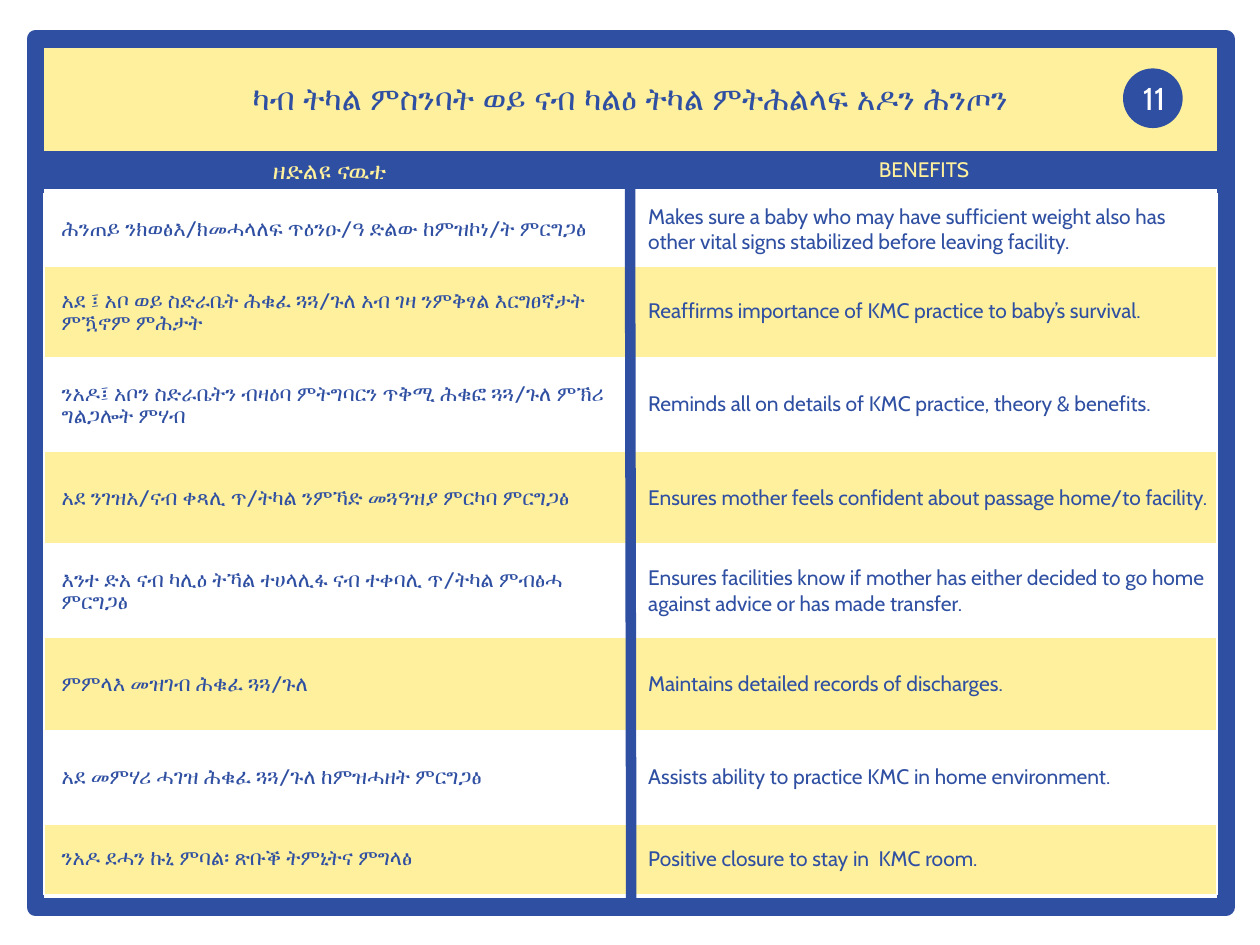
from lxml import etree
from pptx import Presentation
from pptx import util as u
from pptx.dml.color import RGBColor
from pptx.enum import shapes, text
from pptx.oxml import ns

INK = {"blue": "2F4FA2", "cream": "FEF09C", "white": "FFFFFF"}
FONT = "Cabin"
ROWS = [
    ("ሕንጠይ ንክወፅእ/ክመሓላለፍ ጥዕንዑ/ዓ ድልው ከምዝኮነ/ት ምርግጋፅ",
     "Makes sure a baby who may have sufficient weight also has other vital signs stabilized before leaving facility."),
    ("አደ ፤ አቦ ወይ ስድራቤት ሕቁፈ ጓጓ/ጉለ አብ ገዛ ንምቅፃል እርግፀኛታት ምዃኖም ምሕታት",
     "Reaffirms importance of KMC practice to baby’s survival."),
    ("ንአዶ፤ አቦን ስድራቤትን ብዛዕባ ምትግባርን ጥቅሚ ሕቁፎ ጓጓ/ጉለ ምኽሪ ግልጋሎት ምሃብ",
     "Reminds all on details of KMC practice, theory & benefits."),
    ("አደ ንገዝአ/ናብ ቀጻሊ ጥ/ትካል ንምኻድ መጓዓዝያ ምርካባ ምርግጋፅ",
     "Ensures mother feels confident about passage home/to facility."),
    ("እንተ ድአ ናብ ካሊዕ ትኻል ተሀላሊፋ ናብ ተቀባሊ ጥ/ትካል ምብፅሓ ምርግጋፅ",
     "Ensures facilities know if mother has either decided to go home against advice or has made transfer."),
    ("ምምላእ መዝገብ ሕቁፈ ጓጓ/ጉለ",
     "Maintains detailed records of discharges."),
    ("አደ መምሃሪ ሓገዝ ሕቁፈ ጓጓ/ጉለ ከምዝሓዘት ምርግጋፅ",
     "Assists ability to practice KMC in home environment."),
    ("ንአዶ ደሓን ኩኒ ምባል፡ ጽቡቕ ትምኒትና ምግላፅ",
     "Positive closure to stay in  KMC room."),
]


def paint(name):
    return RGBColor.from_string(INK[name])


def write(frame, words, size=12, color="blue", bold=False, align=None):
    para = frame.paragraphs[0]
    para.alignment = align
    run = para.add_run()
    run.text = words
    run.font.name = FONT
    run.font.size = u.Pt(size)
    run.font.bold = bold
    run.font.color.rgb = paint(color)


def label(slide, box, words, wrap=True, anchor=text.MSO_ANCHOR.TOP, **style):
    frame = slide.shapes.add_textbox(*map(u.Inches, box)).text_frame
    frame.word_wrap = wrap
    frame.vertical_anchor = anchor
    write(frame, words, align=text.PP_ALIGN.CENTER, **style)


def block(slide, box, fill=None, line=None, width=1, kind=shapes.MSO_SHAPE.RECTANGLE):
    shape = slide.shapes.add_shape(kind, *map(u.Inches, box))
    shape.shadow.inherit = False
    if fill:
        shape.fill.solid()
        shape.fill.fore_color.rgb = paint(fill)
    else:
        shape.fill.background()
    if line:
        shape.line.color.rgb = paint(line)
        shape.line.width = u.Pt(width)
    else:
        shape.line.fill.background()


def rule(slide, *ends):
    line = slide.shapes.add_connector(shapes.MSO_CONNECTOR.STRAIGHT, *map(u.Inches, ends))
    line.line.color.rgb = paint("blue")
    line.line.width = u.Pt(6)
    etree.SubElement(line._element.spPr, ns.qn("a:effectLst"))


def edge(cell, low):
    props = cell._tc.get_or_add_tcPr()
    for spot, (side, width) in enumerate((("L", 1), ("R", 1), ("T", 1), ("B", low))):
        line = etree.Element(ns.qn("a:ln" + side), w=str(u.Pt(width)))
        fill = etree.SubElement(line, ns.qn("a:solidFill"))
        etree.SubElement(fill, ns.qn("a:srgbClr"), val=INK["white"])
        props.insert(spot, line)


def frame(slide, box):
    x, y, w, h = box
    block(slide, (x, y, w, 1.18), fill="cream")
    block(slide, box, line="blue", width=10)


def heads(slide, box):
    x, y, w, h = box
    block(slide, box, fill="blue")
    label(slide, (x, y - 0.01, 4.67, 0.34), "ዘድልዩ ናዉቲ", size=14, color="cream")
    label(slide, (x + 4.72, y - 0.01, 4.67, h), "BENEFITS", color="cream")


def steps(slide, box):
    x, y, w, h = box
    grid = slide.shapes.add_table(len(ROWS), 2, *map(u.Inches, box)).table
    grid.first_row = grid.horz_banding = False
    for col in grid.columns:
        col.width = u.Inches(w / 2)
    for r, row in enumerate(ROWS):
        grid.rows[r].height = u.Inches(0.56 if r in (0, len(ROWS) - 1) else 0.74)
        for c, words in enumerate(row):
            cell = grid.cell(r, c)
            cell.fill.solid()
            cell.fill.fore_color.rgb = paint("cream" if r % 2 else "white")
            cell.vertical_anchor = text.MSO_ANCHOR.MIDDLE
            cell.margin_left, cell.margin_right = u.Inches(0.14), u.Inches(0.07)
            cell.margin_top = cell.margin_bottom = u.Inches(0.04)
            write(cell.text_frame, words)
            edge(cell, 1 if r else 3)
    rule(slide, 5, y - 0.08, 5.01, y + h + 0.01)


def title(slide, box):
    x, y, w, h = box
    label(slide, box, "ካብ ትካል ምስንባት ወይ ናብ ካልዕ ትካል ምትሕልላፍ አዶን ሕንጦን",
          size=18, bold=True, anchor=text.MSO_ANCHOR.MIDDLE)
    rule(slide, x, y + 0.88, x + 9.38, y + 0.88)


def badge(slide, box):
    x, y, w, h = box
    block(slide, box, fill="blue", line="blue", kind=shapes.MSO_SHAPE.OVAL)
    label(slide, (x, y + 0.03, 0.48, 0.4), "11", wrap=False, size=18, color="white")


def main():
    deck = Presentation()
    deck.slide_width, deck.slide_height = u.Inches(10), u.Inches(7.5)
    slide = deck.slides.add_slide(deck.slide_layouts[6])
    frame(slide, (0.28, 0.31, 9.45, 6.89))
    heads(slide, (0.28, 1.2, 9.45, 0.3))
    steps(slide, (0.35, 1.54, 9.31, 5.6))
    title(slide, (0.28, 0.58, 9.45, 0.4))
    badge(slide, (8.92, 0.55, 0.46, 0.46))
    deck.save("out.pptx")


if __name__ == "__main__":
    main()
